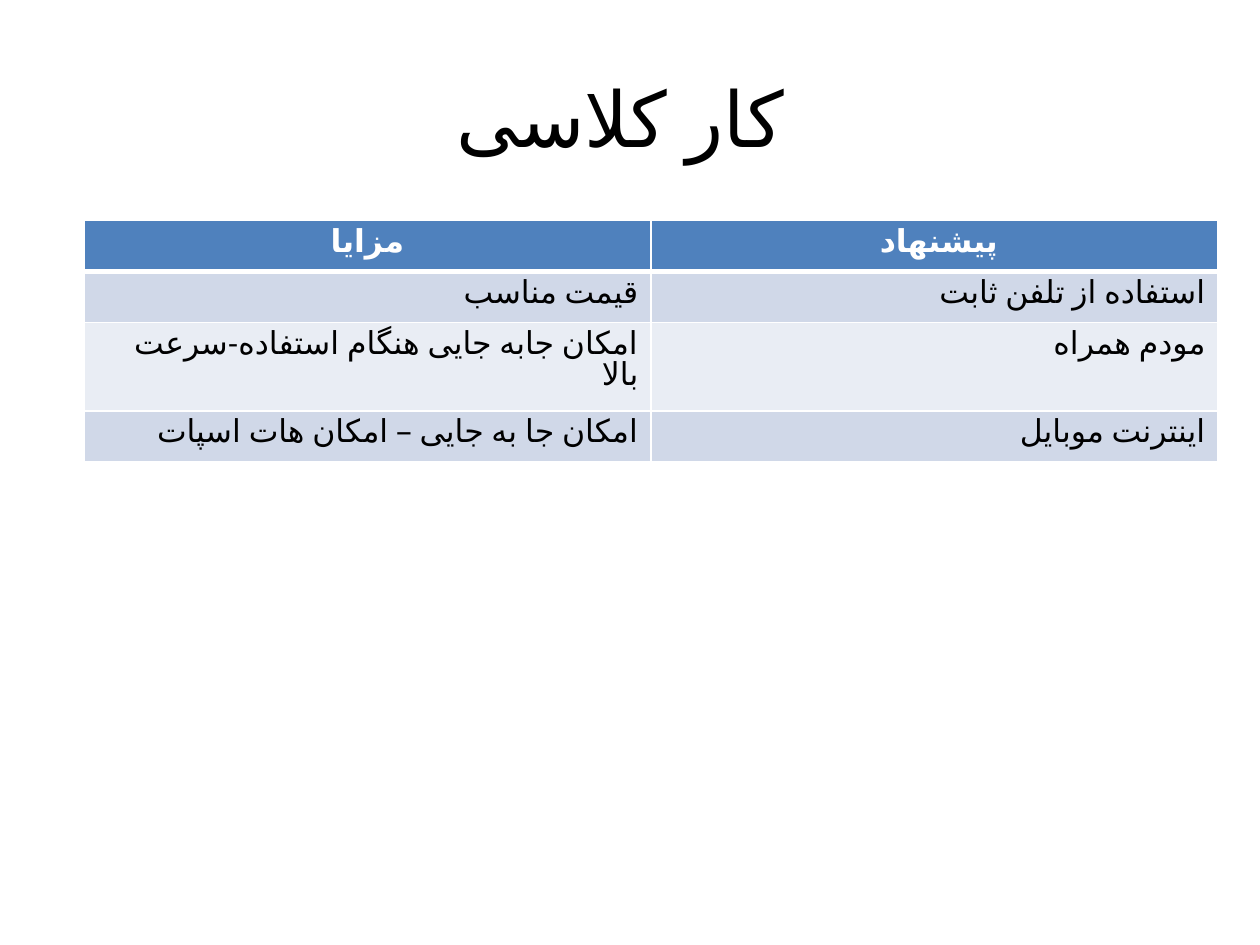
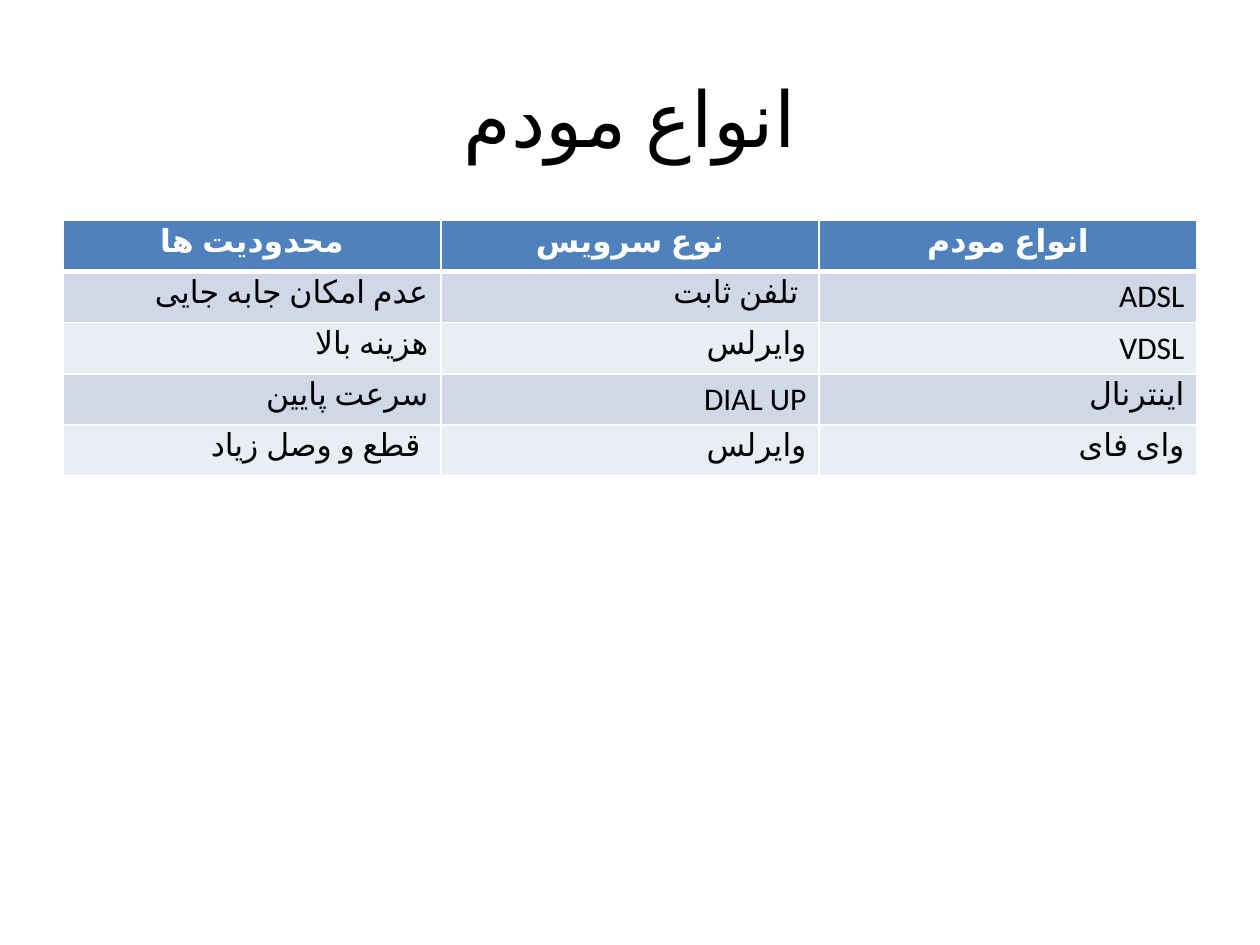
import dataclasses

import pptx
import pptx.dml.color
import pptx.enum.text
import pptx.oxml
import pptx.oxml.ns
import pptx.util

ALIGN = pptx.enum.text.PP_ALIGN
SLIDE_WIDTH = pptx.util.Inches(10)
SLIDE_HEIGHT = pptx.util.Inches(7.5)
COLUMN = SLIDE_WIDTH // 60
ROW = SLIDE_HEIGHT // 150


@dataclasses.dataclass(frozen=True)
class Theme:
    font: str = "Calibri"
    language: str = "fa-IR"
    title_size: float = 44
    table_size: float = 18
    line_height: float = 29.2
    text: str = "000000"
    header_text: str = "FFFFFF"
    header_fill: str = "4F81BD"
    bands: tuple = ("D0D8E8", "E9EDF4")
    border: str = "FFFFFF"
    thin: float = 1
    thick: float = 3


THEME = Theme()


def grid_box(left, top, width, height):
    return left * COLUMN, top * ROW, width * COLUMN, height * ROW


TITLE_BOX = grid_box(3, 6, 54, 25)


def color(code):
    return pptx.dml.color.RGBColor.from_string(code)


def write(para, text, size, ink, align, bold=False):
    para.text = text
    para.alignment = align
    para.font.name = THEME.font
    para.font.size = pptx.util.Pt(size)
    para.font.bold = bold
    para.font.color.rgb = color(ink)
    for span in para.runs:
        span._r.get_or_add_rPr().set("lang", THEME.language)


def add_title(page, box, text):
    frame = page.shapes.add_textbox(*box).text_frame
    frame.word_wrap = True
    frame.vertical_anchor = pptx.enum.text.MSO_ANCHOR.MIDDLE
    write(frame.paragraphs[0], text, THEME.title_size, THEME.text, ALIGN.CENTER)


def set_borders(cell, top, bottom):
    properties = cell._tc.get_or_add_tcPr()
    widths = {"lnL": THEME.thin, "lnR": THEME.thin, "lnT": top, "lnB": bottom}
    for index, (side, width) in enumerate(widths.items()):
        line = pptx.oxml.parse_xml(
            f'<a:{side} {pptx.oxml.ns.nsdecls("a")} w="{pptx.util.Pt(width)}">'
            f'<a:solidFill><a:srgbClr val="{THEME.border}"/></a:solidFill></a:{side}>'
        )
        properties.insert(index, line)


def style_cell(cell, text, row):
    header = row == 0
    cell.fill.solid()
    cell.fill.fore_color.rgb = color(
        THEME.header_fill if header else THEME.bands[(row - 1) % len(THEME.bands)]
    )
    write(
        cell.text_frame.paragraphs[0],
        text,
        THEME.table_size,
        THEME.header_text if header else THEME.text,
        ALIGN.CENTER if header else ALIGN.RIGHT,
        bold=header,
    )
    set_borders(
        cell,
        top=THEME.thick if row == 1 else THEME.thin,
        bottom=THEME.thick if header else THEME.thin,
    )


def add_grid_table(page, left, top, width, records):
    line_height = pptx.util.Pt(THEME.line_height)
    column_count = len(records[0])
    table = page.shapes.add_table(
        len(records), column_count, left, top, width, line_height * len(records)
    ).table
    for column in table.columns:
        column.width = width // column_count
    for row, record in enumerate(records):
        table.rows[row].height = line_height
        for column, text in enumerate(record):
            style_cell(table.cell(row, column), text, row)
    return table


def add_table_page(deck, title, table_left, records):
    page = deck.slides.add_slide(deck.slide_layouts[6])
    add_title(page, TITLE_BOX, title)
    left, top, width, _ = grid_box(table_left, 35, 54, 0)
    return add_grid_table(page, left, top, width, records)


def main():
    deck = pptx.Presentation()
    deck.slide_width = SLIDE_WIDTH
    deck.slide_height = SLIDE_HEIGHT

    proposals = add_table_page(deck, "کار کلاسی ", 4, [
        ("مزایا", "پیشنهاد "),
        ("قیمت مناسب", "استفاده از تلفن ثابت"),
        ("امکان جابه جایی هنگام استفاده-سرعت بالا", "مودم همراه"),
        ("امکان جا به جایی – امکان هات اسپات", "اینترنت موبایل"),
    ])
    proposal_header = proposals.cell(0, 1).text_frame.paragraphs[0]
    proposal_header._p.get_or_add_pPr().set("rtl", "1")

    add_table_page(deck, "انواع مودم", 3, [
        ("محدودیت ها", "نوع سرویس", "انواع مودم"),
        ("عدم امکان جابه جایی", "تلفن ثابت ", "ADSL"),
        ("هزینه بالا", "وایرلس", "VDSL"),
        ("سرعت پایین", "DIAL UP", "اینترنال"),
        ("قطع و وصل زیاد ", "وایرلس", "وای فای"),
    ])
    deck.save("out.pptx")


if __name__ == "__main__":
    main()
